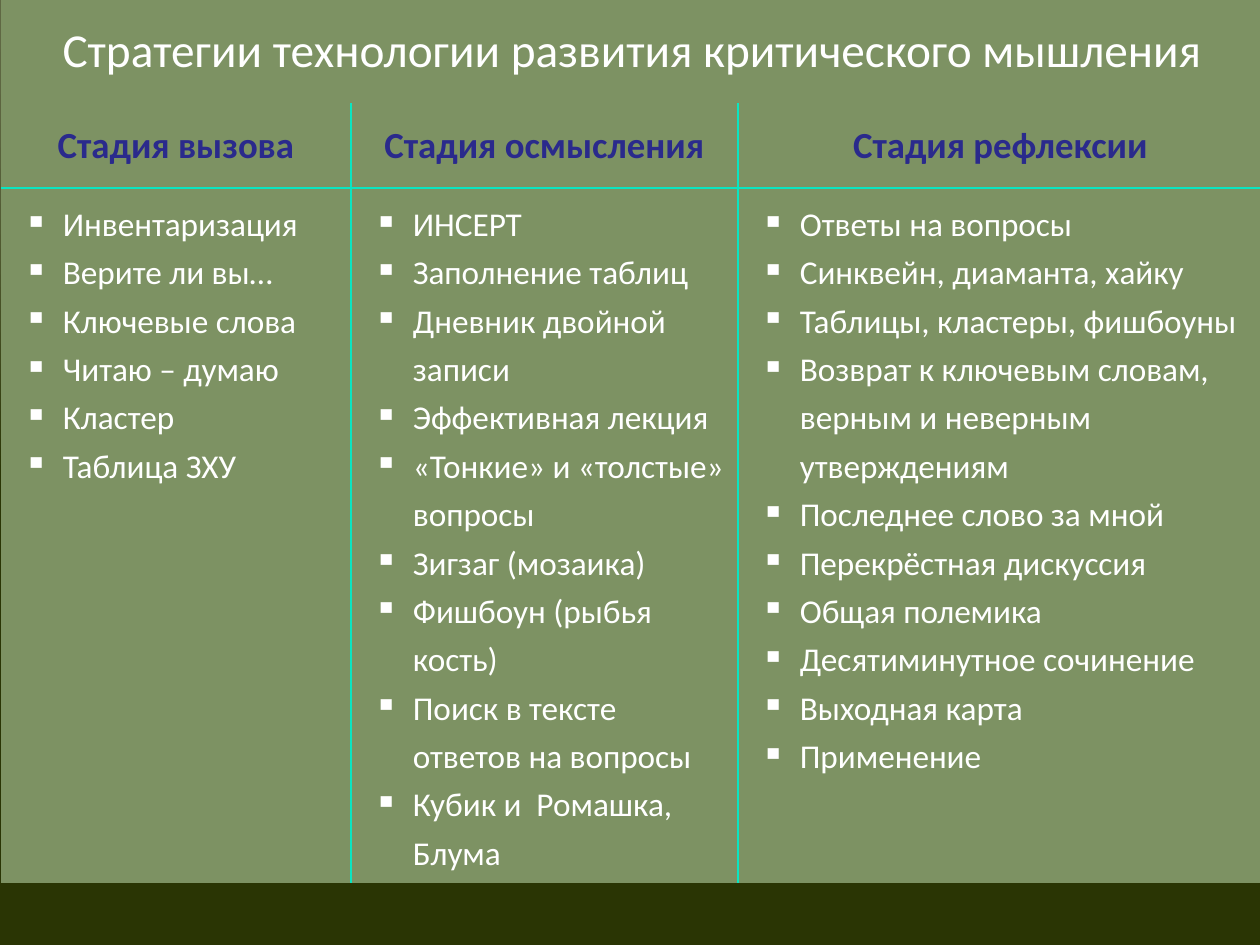
from pptx import Presentation
from pptx.dml.color import RGBColor
from pptx.enum.text import MSO_ANCHOR as Anchor, PP_ALIGN as Align
from pptx.oxml import parse_xml
from pptx.oxml.ns import nsdecls
from pptx.util import Emu, Pt

GREEN = RGBColor(0x7D, 0x92, 0x63)
WHITE = RGBColor(0xFF, 0xFF, 0xFF)
NAVY = RGBColor(0x2A, 0x2A, 0x8C)
AQUA = RGBColor(0x0B, 0xE5, 0xC1)
BACKGROUND = [(0, RGBColor(0xD0, 0xD4, 0xC9)),
              (40, RGBColor(0xC9, 0xCD, 0xC0)),
              (100, RGBColor(0x2A, 0x35, 0x04))]
FONT = "Calibri"
COLUMN_WIDTHS = [350, 387, 525]
ROW_HEIGHTS = [103, 85, 620]

TITLE = "Стратегии технологии развития критического мышления"
STAGES = {
    "Стадия вызова": [
        "Инвентаризация", "Верите ли вы…", "Ключевые слова",
        "Читаю – думаю", "Кластер", "Таблица ЗХУ"],
    "Стадия осмысления": [
        "ИНСЕРТ", "Заполнение таблиц", "Дневник двойной записи",
        "Эффективная лекция", "«Тонкие» и «толстые» вопросы",
        "Зигзаг (мозаика)", "Фишбоун (рыбья кость)",
        "Поиск в тексте ответов на вопросы", "Кубик и  Ромашка, Блума"],
    "Стадия рефлексии": [
        "Ответы на вопросы", "Синквейн, диаманта, хайку",
        "Таблицы, кластеры, фишбоуны",
        "Возврат к ключевым словам, верным и неверным утверждениям",
        "Последнее слово за мной", "Перекрёстная дискуссия",
        "Общая полемика", "Десятиминутное сочинение",
        "Выходная карта", "Применение"],
}


def px(n):
    """Convert px, 126 to the inch, into EMU."""
    return Emu(round(n * 914400 / 126))


def paint_background(s):
    """Fill the slide background with a circular gradient."""
    stops = "".join(f'<a:gs pos="{pos * 1000}"><a:srgbClr val="{color}"/></a:gs>'
                    for pos, color in BACKGROUND)
    s.background.fill.solid()
    bg_pr = s.background._cSld.bg.bgPr
    bg_pr.replace(bg_pr[0], parse_xml(
        f'<a:gradFill {nsdecls("a")}><a:gsLst>{stops}</a:gsLst><a:path path="circle">'
        '<a:fillToRect l="50000" t="-80000" r="50000" b="180000"/></a:path></a:gradFill>'))


def set_borders(cell, sides):
    """Draw the named sides of a cell in aqua and hide the others."""
    tc_pr = cell._tc.get_or_add_tcPr()
    for i, side in enumerate("LRTB"):
        fill = (f'<a:solidFill><a:srgbClr val="{AQUA}"/></a:solidFill>'
                if side in sides else "<a:noFill/>")
        tc_pr.insert(i, parse_xml(
            f'<a:ln{side} {nsdecls("a")} w="{Pt(1)}">{fill}</a:ln{side}>'))


def write_cell(cell, lines, size, color, bold=False, bulleted=False):
    """Write lines into a cell, as a centred heading or a bulleted list."""
    cell.fill.solid()
    cell.fill.fore_color.rgb = GREEN
    cell.margin_left = cell.margin_right = px(12)
    cell.margin_top = cell.margin_bottom = px(9)
    cell.vertical_anchor = Anchor.TOP if bulleted else Anchor.MIDDLE
    tf = cell.text_frame
    tf.text = "\n".join(lines)
    for p in tf.paragraphs:
        if bulleted:
            p.line_spacing = 1.2
            p_pr = p._p.get_or_add_pPr()
            p_pr.set("marL", str(px(50)))
            p_pr.set("indent", str(px(-39)))
            p_pr.append(parse_xml(f'<a:buChar {nsdecls("a")} char="▪"/>'))
        else:
            p.alignment = Align.CENTER
        for r in p.runs:
            r.font.name = FONT
            r.font.size = Pt(size)
            r.font.bold = bold
            r.font.color.rgb = color


def add_strategy_table(s, left, top):
    """Add the table with a title row, stage headings and strategy lists."""
    frame = s.shapes.add_table(len(ROW_HEIGHTS), len(COLUMN_WIDTHS), px(left), px(top),
                               px(sum(COLUMN_WIDTHS)), px(sum(ROW_HEIGHTS)))
    table = frame.table
    table.first_row = table.horz_banding = False
    for column, width in zip(table.columns, COLUMN_WIDTHS):
        column.width = px(width)
    for row, height in zip(table.rows, ROW_HEIGHTS):
        row.height = px(height)

    title = table.cell(0, 0)
    title.merge(table.cell(0, len(COLUMN_WIDTHS) - 1))
    write_cell(title, [TITLE], 27, WHITE)
    for i, (stage, strategies) in enumerate(STAGES.items()):
        heading, body = table.cell(1, i), table.cell(2, i)
        write_cell(heading, [stage], 21, NAVY, bold=True)
        write_cell(body, strategies, 19, WHITE, bulleted=True)
        sides = ("L" if i > 0 else "") + ("R" if i < len(STAGES) - 1 else "")
        set_borders(table.cell(0, i), "")
        set_borders(heading, sides + "B")
        set_borders(body, sides + "T")


def main():
    """Build the slide and save it."""
    prs = Presentation()
    prs.slide_width, prs.slide_height = px(1260), px(945)
    s = prs.slides.add_slide(prs.slide_layouts[6])
    paint_background(s)
    add_strategy_table(s, 1, 0)
    prs.save("out.pptx")


if __name__ == "__main__":
    main()
